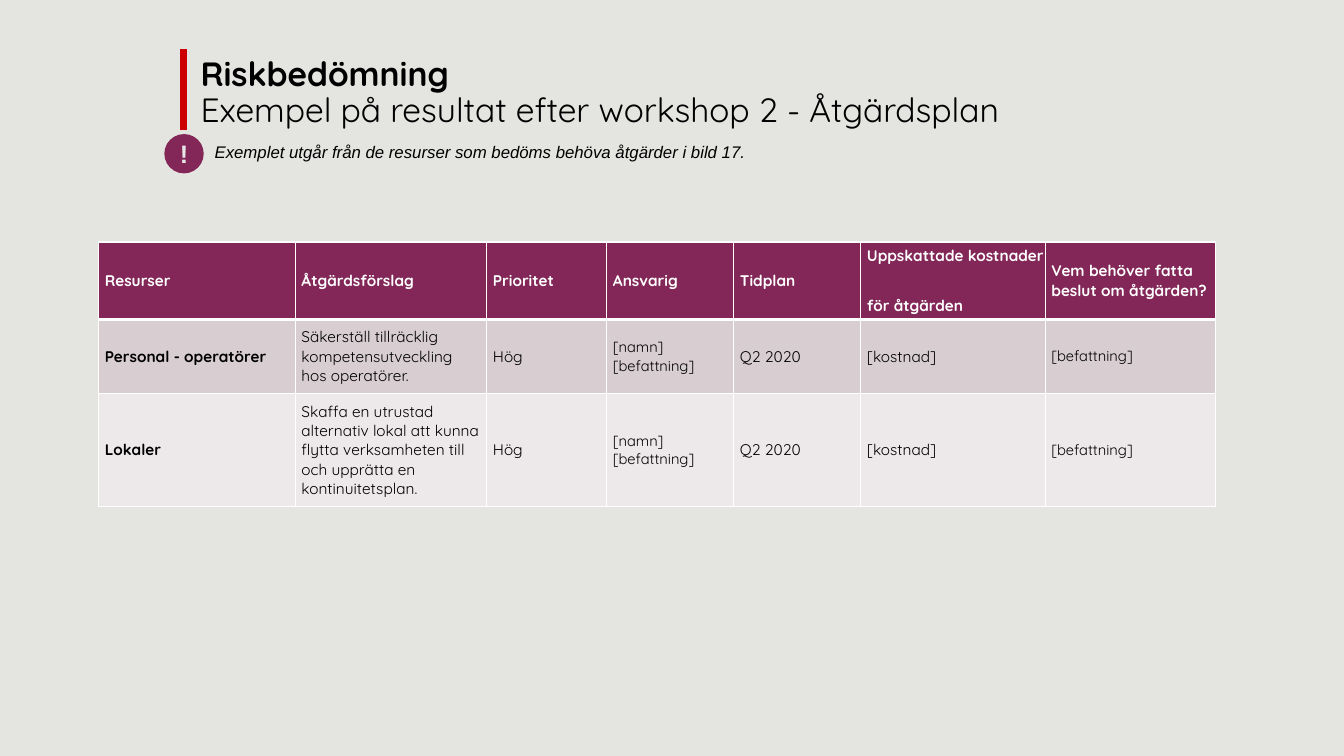
from lxml import etree
from pptx import Presentation
from pptx.dml.color import RGBColor
from pptx.enum.shapes import MSO_CONNECTOR, MSO_SHAPE
from pptx.enum.text import MSO_ANCHOR, PP_ALIGN
from pptx.oxml import parse_xml
from pptx.oxml.ns import nsdecls, qn
from pptx.util import Inches, Pt

LINE, OVAL = MSO_CONNECTOR.STRAIGHT, MSO_SHAPE.OVAL
MIDDLE, CENTER = MSO_ANCHOR.MIDDLE, PP_ALIGN.CENTER

THEME = {
    "background": "E4E4E1", "plum": "822757", "bands": ["D8CDD1", "EDE8EA"],
    "red": "CC0000", "black": "000000", "white": "FFFFFF", "pale": "E7E6E6",
    "heading": "Quicksand", "body": "Arial",
    "title": 24, "badge": 18, "note": 12, "cell": 11, "small": 10.5,
}

prs = Presentation()
prs.slide_width, prs.slide_height = Inches(13.33), Inches(7.5)
slide = prs.slides.add_slide(prs.slide_layouts[6])
slide.background.fill.solid()
slide.background.fill.fore_color.rgb = RGBColor.from_string(THEME["background"])


def grid(left, top, width, height):
    """Turn hundredths of the slide's width and height into lengths."""
    col, row = prs.slide_width / 100, prs.slide_height / 100
    return int(left * col), int(top * row), int(width * col), int(height * row)


def style(font, color, **values):
    font.color.rgb = RGBColor.from_string(THEME[color])
    for name, value in values.items():
        setattr(font, name, value)


# Action plan table
widths = [14.63, 14.25, 8.93, 9.45, 9.45, 13.73, 12.68]
heights = [8.67, 9.8, 14.87]
shared = ["Hög", "[namn]\n[befattning]", "Q2 2020", "[kostnad]", "[befattning]"]
plan = [
    ["Resurser", "Åtgärdsförslag", "Prioritet", "Ansvarig", "Tidplan",
     "Uppskattade kostnader \vför åtgärden", "Vem behöver fatta \vbeslut om åtgärden?"],
    ["Personal - operatörer",
     "Säkerställ tillräcklig kompetensutveckling hos operatörer.", *shared],
    ["Lokaler",
     "Skaffa en utrustad alternativ lokal att kunna flytta verksamheten till "
     "och upprätta en kontinuitetsplan.", *shared],
]
table = slide.shapes.add_table(
    len(plan), len(widths), *grid(7.35, 32, sum(widths), sum(heights))).table
table.first_row = table.horz_banding = False
for column, width in zip(table.columns, widths):
    column.width = grid(0, 0, width, 0)[2]

for r, texts in enumerate(plan):
    table.rows[r].height = grid(0, 0, 0, heights[r])[3]
    header = r == 0
    pad = Inches(0.04 if header else 0.08)
    cell_format = {
        "vertical_anchor": MIDDLE, "margin_left": Inches(0.06),
        "margin_right": Inches(0 if header else 0.06),
        "margin_top": pad, "margin_bottom": pad,
    }
    borders = {"lnL": 1, "lnR": 1, "lnT": 3 if r == 1 else 1, "lnB": 3 if header else 1}
    for c, text in enumerate(texts):
        cell = table.cell(r, c)
        cell.text_frame.text = text
        for name, value in cell_format.items():
            setattr(cell, name, value)
        for edge, points in borders.items():
            cell._tc.get_or_add_tcPr().append(parse_xml(
                f'<a:{edge} {nsdecls("a")} w="{Pt(points)}"><a:solidFill>'
                f'<a:srgbClr val="{THEME["white"]}"/></a:solidFill></a:{edge}>'))
        cell.fill.solid()
        cell.fill.fore_color.rgb = RGBColor.from_string(
            THEME["plum"] if header else THEME["bands"][r - 1])
        size = THEME["small" if not header and "[befattning]" in text else "cell"]
        for paragraph in cell.text_frame.paragraphs:
            for run in paragraph.runs:
                style(run.font, "white" if header else "black", name=THEME["heading"],
                      size=Pt(size), bold=header or c == 0)

# Title
title = slide.shapes.add_textbox(*grid(14.18, 6.93, 73.74, 10.67)).text_frame
title.word_wrap = True
heading = title.paragraphs[0]
heading.line_spacing = 0.9
heading.text = "Riskbedömning \vExempel på resultat efter workshop 2 - Åtgärdsplan"
for run, bold in zip(heading.runs, [True, False]):
    style(run.font, "black", name=THEME["heading"], size=Pt(THEME["title"]), bold=bold)

# Red rule beside the title
x, y, _, length = grid(13.65, 6.53, 0, 10.67)
rule = slide.shapes.add_connector(LINE, x, y, x, y + length)
rule.line.color.rgb = RGBColor.from_string(THEME["red"])
rule.line.width = Pt(5)
etree.SubElement(rule._element.spPr, qn("a:effectLst"))

# Exclamation badge
badge = slide.shapes.add_shape(OVAL, *grid(12.23, 17.73, 2.93, 5.2))
badge.shadow.inherit = False
badge.fill.solid()
badge.fill.fore_color.rgb = RGBColor.from_string(THEME["plum"])
badge.line.fill.background()
badge_format = {"vertical_anchor": MIDDLE, "margin_left": 0, "margin_right": 0,
                "margin_top": 0, "margin_bottom": 0, "text": "!"}
for name, value in badge_format.items():
    setattr(badge.text_frame, name, value)
mark = badge.text_frame.paragraphs[0]
mark.alignment = CENTER
style(mark.runs[0].font, "pale", name=THEME["body"], size=Pt(THEME["badge"]), bold=True)

# Note beside the badge
note = slide.shapes.add_textbox(*grid(15.23, 18.13, 53.79, 4)).text_frame
note.word_wrap = True
note.text = "Exemplet utgår från de resurser som bedöms behöva åtgärder i bild 17."
style(note.paragraphs[0].runs[0].font, "black", name=THEME["body"],
      size=Pt(THEME["note"]), italic=True)

prs.save("out.pptx")
